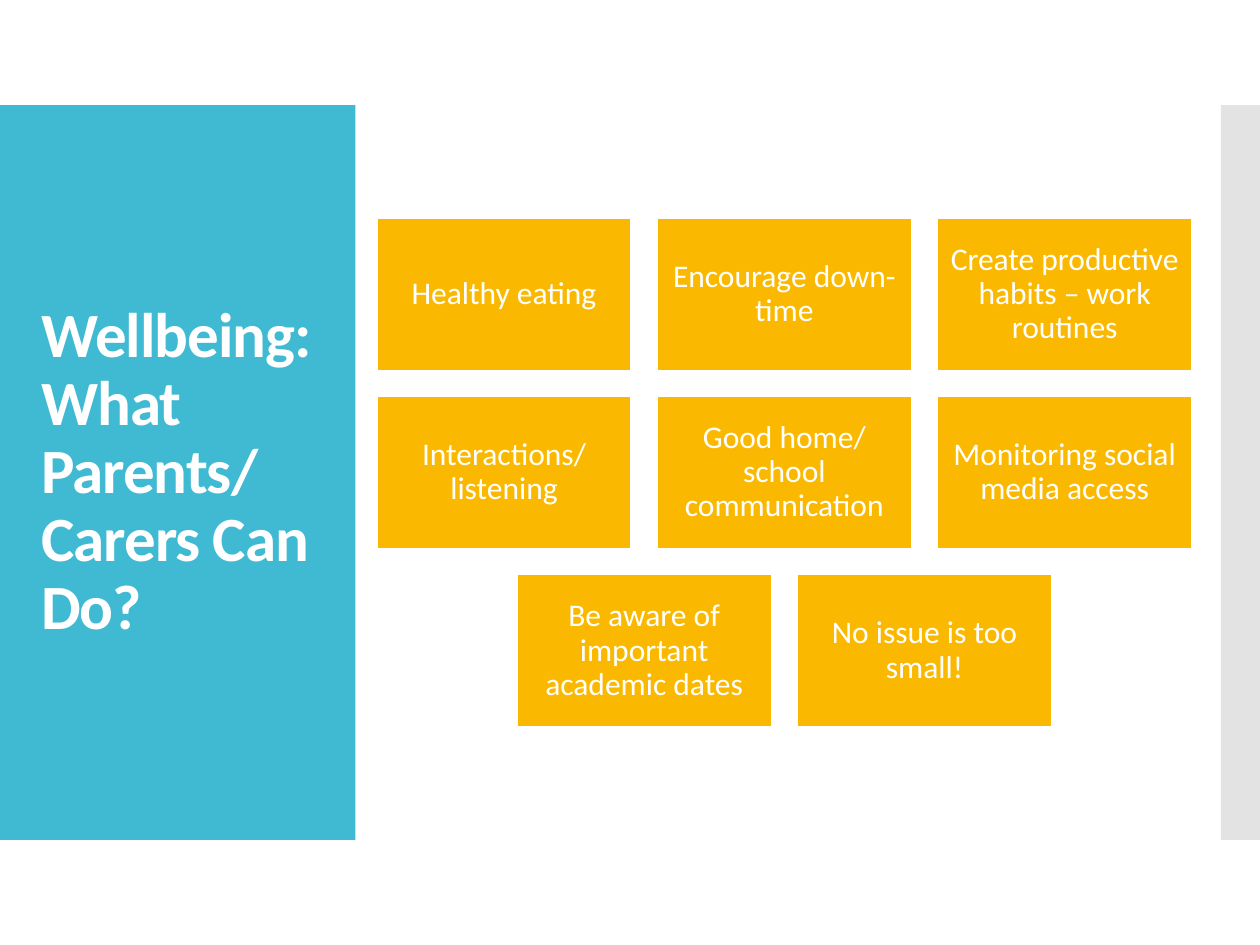
from dataclasses import dataclass

from lxml.etree import SubElement
from pptx import Presentation
from pptx.dml.color import RGBColor
from pptx.enum.shapes import MSO_SHAPE
from pptx.enum.text import MSO_ANCHOR, MSO_AUTO_SIZE, PP_ALIGN
from pptx.oxml.ns import qn
from pptx.shapes.autoshape import Shape
from pptx.slide import Slide
from pptx.util import Inches, Pt


@dataclass(frozen=True)
class Theme:
    font: str = "Calibri"
    title_size: float = 36
    tile_size: float = 18
    text: str = "FFFFFF"
    title_panel: str = "40BAD2"
    edge_panel: str = "C8C8C8"
    tile: str = "FAB900"
    tile_line: str = "FFFFFF"


@dataclass(frozen=True)
class Area:
    left: float
    top: float
    width: float
    height: float

    def lengths(self) -> tuple[int, ...]:
        return tuple(Inches(n) for n in (self.left, self.top, self.width, self.height))


@dataclass(frozen=True)
class TileGrid:
    """Equal tiles in rows; a short row is centred under the full ones."""
    left: float
    top: float
    tile_width: float
    tile_height: float
    gap: float
    columns: int

    def area(self, row: int, column: int, row_length: int) -> Area:
        pitch = self.tile_width + self.gap
        shift = column + (self.columns - row_length) / 2
        return Area(self.left + shift * pitch,
                    self.top + row * (self.tile_height + self.gap),
                    self.tile_width, self.tile_height)


THEME = Theme()
PAGE_WIDTH, PAGE_HEIGHT = 10, 7.5
BAND_TOP, BAND_HEIGHT = PAGE_HEIGHT / 9, PAGE_HEIGHT * 7 / 9
GRID = TileGrid(left=2.99, top=1.73, tile_width=2.02, tile_height=1.21,
                gap=0.205, columns=3)
TITLE = "Wellbeing:\vWhat Parents/ Carers Can Do?"
TILE_ROWS = (
    ("Healthy eating", "Encourage down-time", "Create productive habits – work routines"),
    ("Interactions/ listening", "Good home/ school communication",
     "Monitoring social media access"),
    ("Be aware of important academic dates", "No issue is too small!"),
)


def add_rectangle(page: Slide, area: Area, color: str) -> Shape:
    box = page.shapes.add_shape(MSO_SHAPE.RECTANGLE, *area.lengths())
    box.shadow.inherit = False
    box.fill.solid()
    box.fill.fore_color.rgb = RGBColor.from_string(color)
    box.line.fill.background()
    return box


def write_text(box: Shape, text: str, size: float, align: PP_ALIGN, bold: bool) -> None:
    frame = box.text_frame
    frame.word_wrap = True
    frame.auto_size = MSO_AUTO_SIZE.NONE
    frame.vertical_anchor = MSO_ANCHOR.MIDDLE
    para = frame.paragraphs[0]
    para.text = text
    para.alignment = align
    para.line_spacing = 0.9
    para.font.name = THEME.font
    para.font.size = Pt(size)
    para.font.bold = bold
    para.font.color.rgb = RGBColor.from_string(THEME.text)


def add_panels(page: Slide) -> None:
    add_rectangle(page, Area(0, BAND_TOP, 2.82, BAND_HEIGHT), THEME.title_panel)
    edge = add_rectangle(page, Area(9.69, BAND_TOP, PAGE_WIDTH - 9.69, BAND_HEIGHT),
                         THEME.edge_panel)
    color = edge.fill._xPr.find(qn("a:solidFill"))[0]
    SubElement(color, qn("a:alpha"), val="50000")


def add_title(page: Slide) -> None:
    box = page.shapes.add_textbox(*Area(0.23, 2.96, 2.44, 1.59).lengths())
    write_text(box, TITLE, THEME.title_size, PP_ALIGN.LEFT, bold=True)
    for span in box.text_frame.paragraphs[0].runs:
        span.font._element.set("spc", "-60")


def add_tile(page: Slide, area: Area, text: str) -> None:
    box = add_rectangle(page, area, THEME.tile)
    box.line.color.rgb = RGBColor.from_string(THEME.tile_line)
    box.line.width = Pt(0.85)
    frame = box.text_frame
    frame.margin_left = frame.margin_right = Inches(0.07)
    frame.margin_top = frame.margin_bottom = Inches(0.07)
    write_text(box, text, THEME.tile_size, PP_ALIGN.CENTER, bold=False)


def main() -> None:
    deck = Presentation()
    deck.slide_width, deck.slide_height = Inches(PAGE_WIDTH), Inches(PAGE_HEIGHT)
    page = deck.slides.add_slide(deck.slide_layouts[6])
    add_panels(page)
    add_title(page)
    for row, labels in enumerate(TILE_ROWS):
        for column, label in enumerate(labels):
            add_tile(page, GRID.area(row, column, len(labels)), label)
    deck.save("out.pptx")


if __name__ == "__main__":
    main()
